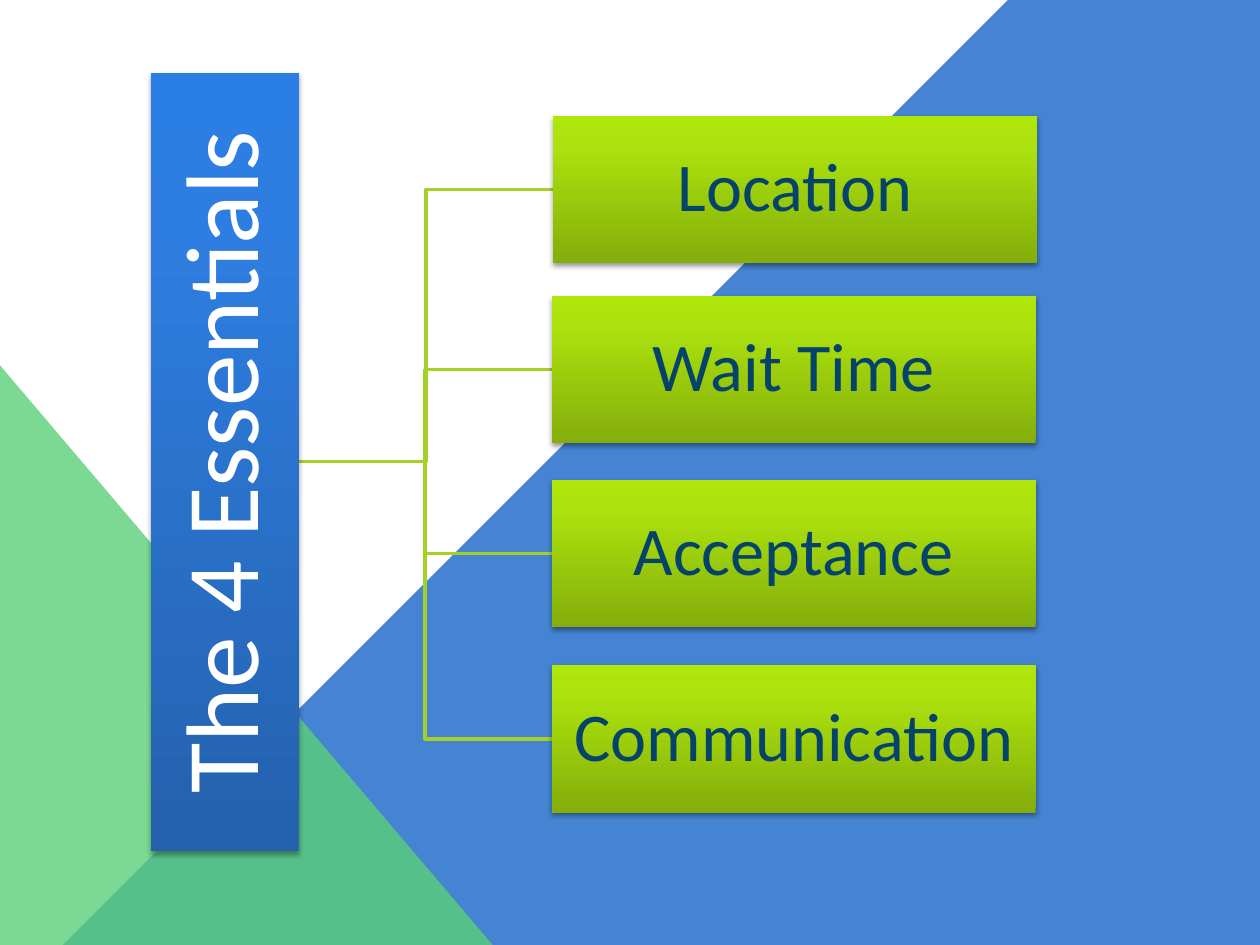
from dataclasses import dataclass

from lxml import etree
from pptx import Presentation
from pptx import util as u
from pptx.dml.color import RGBColor
from pptx.enum import shapes, text
from pptx.oxml.ns import qn

TITLE = "The 4 Essentials"
ESSENTIALS = [  # label, left, top
    ("Location", 4.39, 0.92),
    ("Wait Time", 4.38, 2.35),
    ("Acceptance", 4.38, 3.81),
    ("Communication", 4.38, 5.28),
]
SLIDE_WIDTH, SLIDE_HEIGHT = 10, 7.5
BAR_LEFT, BAR_TOP, BAR_LENGTH = 1.2, 0.58, 6.17
BOX_WIDTH, BOX_HEIGHT = 3.84, 1.17
WEDGE = [(0, 7.5), (8.46, 0), (10, 0), (10, 7.5)]


@dataclass(frozen=True)
class Theme:
    font: str = "Calibri"
    title_size: int = 59
    label_size: int = 39
    title_text: str = "FFFFFF"
    label_text: str = "06436B"
    wedge: str = "4584D3"
    triangle: str = "5BD078"
    link: str = "A5D028"
    blue: tuple = ((0, "2461AD"), (80, "2E7EE1"), (100, "2B7EE6"))
    green: tuple = ((0, "84AE0B"), (80, "ACE20E"), (100, "AFE70A"))


THEME = Theme()


def add_child(parent, tag, **attributes):
    values = {name: str(value) for name, value in attributes.items()}
    return etree.SubElement(parent, qn(tag), values)


def fill_plain(shape, color):
    shape.shadow.inherit = False
    shape.fill.solid()
    shape.fill.fore_color.rgb = RGBColor.from_string(color)
    shape.line.fill.background()


def fill_gradient(shape, stops, angle):
    shape.fill.gradient()
    shape.fill.gradient_angle = angle
    stop_list = shape._element.spPr.find(".//" + qn("a:gsLst"))
    for stop in list(stop_list):
        stop_list.remove(stop)
    for percent, color in stops:
        stop = add_child(stop_list, "a:gs", pos=percent * 1000)
        add_child(stop, "a:srgbClr", val=color)
    shape.line.fill.background()


def add_shadow(shape, distance, opacity):
    shape.shadow.inherit = False
    effects = shape._element.spPr.find(qn("a:effectLst"))
    shadow = add_child(effects, "a:outerShdw", blurRad=u.Pt(3.1), dist=u.Pt(distance),
                       dir=90 * 60000, rotWithShape=0)
    color = add_child(shadow, "a:srgbClr", val="000000")
    add_child(color, "a:alpha", val=opacity * 1000)


def write_label(shape, label, size, color, inset):
    frame = shape.text_frame
    frame.word_wrap = True
    frame.vertical_anchor = text.MSO_ANCHOR.MIDDLE
    frame.margin_left = frame.margin_right = u.Inches(inset)
    frame.margin_top = frame.margin_bottom = u.Inches(inset)
    para = frame.paragraphs[0]
    para.text = label
    para.alignment = text.PP_ALIGN.CENTER
    para.line_spacing = 0.9
    para.font.name = THEME.font
    para.font.size = u.Pt(size)
    para.font.color.rgb = RGBColor.from_string(color)


def add_preset(page, kind, *place):
    return page.shapes.add_shape(kind, *map(u.Inches, place))


def add_background(page):
    builder = page.shapes.build_freeform(*WEDGE[0], scale=u.Inches(1))
    builder.add_line_segments(WEDGE[1:], close=True)
    fill_plain(builder.convert_to_shape(), THEME.wedge)
    triangle = add_preset(page, shapes.MSO_SHAPE.RIGHT_TRIANGLE, 0, 2.9, 3.91, 4.6)
    fill_plain(triangle, THEME.triangle)
    color = triangle._element.spPr.find(".//" + qn("a:srgbClr"))
    add_child(color, "a:alpha", val=80000)


def add_link(page, left, top):
    """Draw an elbow from the title bar to the left side of a box."""
    start = BAR_LEFT + BOX_HEIGHT, BAR_TOP + BAR_LENGTH / 2
    end = left, top + BOX_HEIGHT / 2
    link = page.shapes.add_connector(shapes.MSO_CONNECTOR.ELBOW, *map(u.Inches, start + end))
    link.line.color.rgb = RGBColor.from_string(THEME.link)
    link.line.width = u.Pt(2)
    add_child(link._element.spPr, "a:effectLst")
    return link


def add_title_bar(page):
    """Turn a horizontal bar about its centre so that it reads upwards."""
    shift = (BAR_LENGTH - BOX_HEIGHT) / 2
    bar = add_preset(page, shapes.MSO_SHAPE.RECTANGLE,
                     BAR_LEFT - shift, BAR_TOP + shift, BAR_LENGTH, BOX_HEIGHT)
    bar.rotation = 270
    fill_gradient(bar, THEME.blue, 0)
    add_shadow(bar, 1.8, 35)
    write_label(bar, TITLE, THEME.title_size, THEME.title_text, 0.04)


def add_box(page, label, left, top):
    box = add_preset(page, shapes.MSO_SHAPE.RECTANGLE, left, top, BOX_WIDTH, BOX_HEIGHT)
    fill_gradient(box, THEME.green, 90)
    add_shadow(box, 1.6, 38)
    write_label(box, label, THEME.label_size, THEME.label_text, 0.03)
    return box


def main():
    deck = Presentation()
    deck.slide_width = u.Inches(SLIDE_WIDTH)
    deck.slide_height = u.Inches(SLIDE_HEIGHT)
    page = deck.slides.add_slide(deck.slide_layouts[6])
    add_background(page)
    links = [add_link(page, left, top) for _, left, top in reversed(ESSENTIALS)]
    add_title_bar(page)
    for essential, link in zip(ESSENTIALS, reversed(links)):
        link.end_connect(add_box(page, *essential), 1)
    deck.save("out.pptx")


if __name__ == "__main__":
    main()
